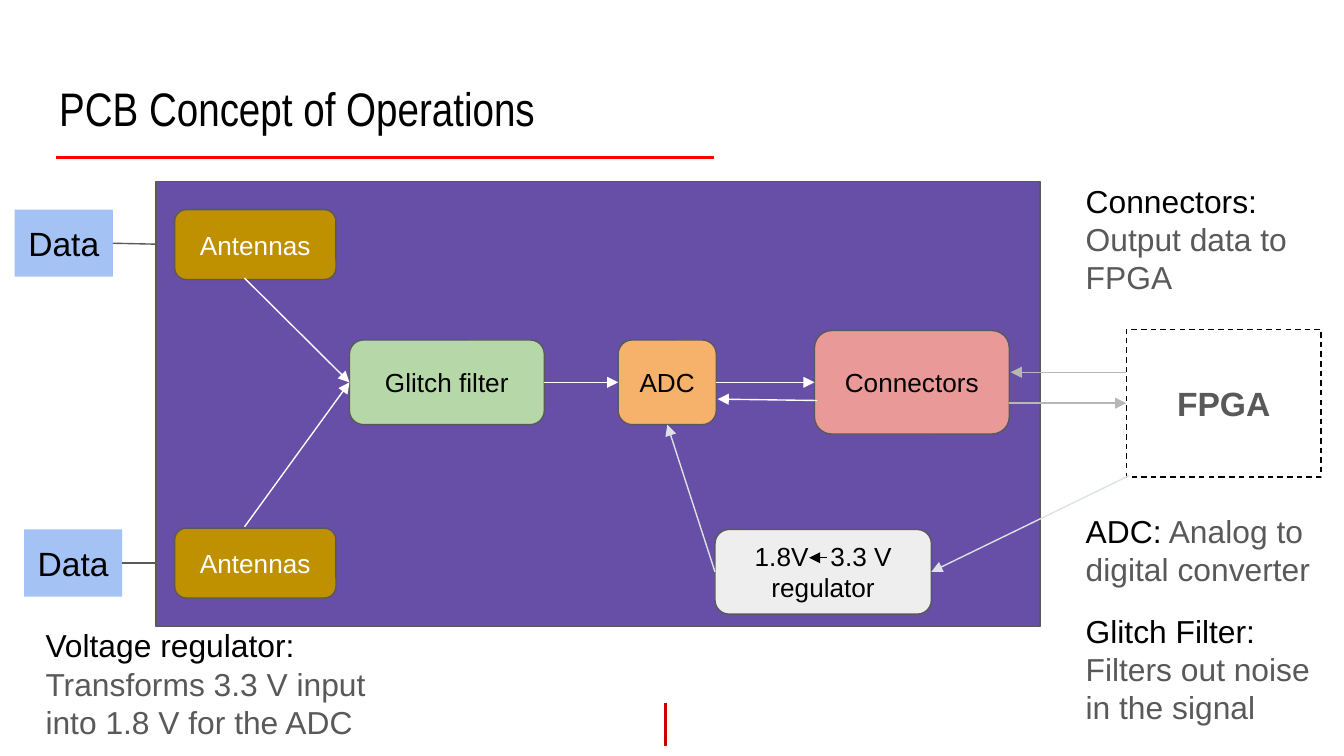
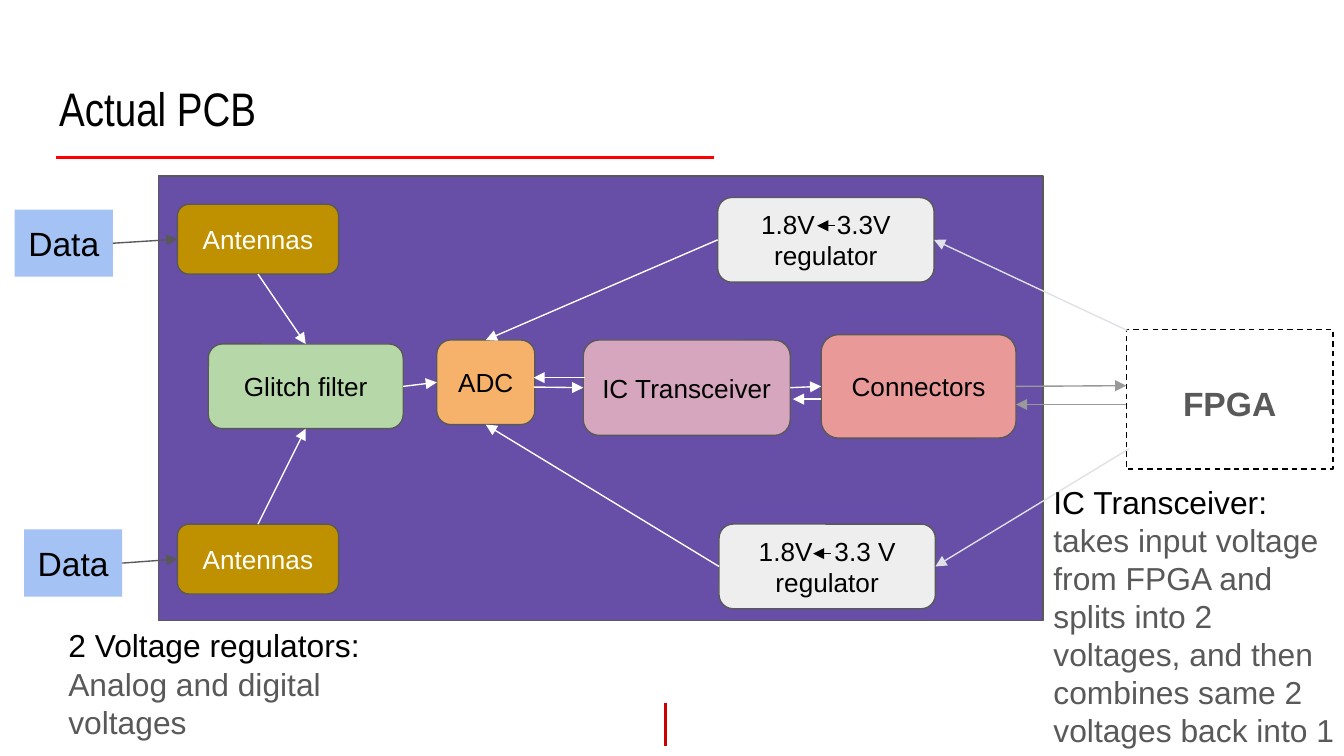
from lxml.etree import SubElement
from pptx import Presentation
from pptx.dml.color import RGBColor
from pptx.enum.dml import MSO_LINE
from pptx.enum.shapes import MSO_CONNECTOR as LINK, MSO_SHAPE as PRESET
from pptx.enum.text import MSO_ANCHOR as ANCHOR, PP_ALIGN as ALIGN
from pptx.oxml.ns import qn
from pptx.util import Inches, Pt

COLORS = {
    "black": "000000", "white": "FFFFFF", "slate": "595959", "rule": "FF0000",
    "tick": "CC0000", "board": "674EA7", "data": "A4C2F4", "antenna": "BF9000",
    "filter": "B6D7A8", "adc": "F6B26B", "transceiver": "D5A6BD",
    "connectors": "EA9999", "regulator": "EEEEEE", "power": "DEE2E6",
    "silver": "B7B7B7", "gray": "999999",
}
RGB = {name: RGBColor.from_string(value) for name, value in COLORS.items()}

deck = Presentation()
deck.slide_width = Inches(10)
deck.slide_height = deck.slide_width * 9 // 16

# Square grid: 100 columns by 56.25 rows
CELL = deck.slide_width // 100
MARGINS = {f"margin_{side}": CELL for side in ("left", "top", "right", "bottom")}
CENTERED = {**MARGINS, "word_wrap": True, "vertical_anchor": ANCHOR.MIDDLE}
ON_TOP = {**MARGINS, "word_wrap": True, "vertical_anchor": ANCHOR.TOP}
TOP, LEFT, BOTTOM, RIGHT = range(4)

# Kind: preset, width, height, fill, outline, text, text size, text colour
KINDS = {
    "Board": (PRESET.RECTANGLE, 65.8, 33.1, "board", "slate", "", 14, "white"),
    "FPGA": (PRESET.RECTANGLE, 14.5, 11, None, "black", "FPGA", 18, "slate"),
    "Data": (PRESET.RECTANGLE, 7.3, 5, "data", None, "Data", 18, "black"),
    "Antennas": (PRESET.ROUNDED_RECTANGLE, 12, 5.2, "antenna", "slate", "Antennas", 14, "white"),
    "Filter": (PRESET.ROUNDED_RECTANGLE, 14.5, 6.3, "filter", "slate", "Glitch filter", 14, "black"),
    "ADC": (PRESET.ROUNDED_RECTANGLE, 7.3, 6.3, "adc", "slate", "ADC", 14, "black"),
    "Transceiver": (PRESET.ROUNDED_RECTANGLE, 15.4, 7.1, "transceiver", "slate",
                    "IC Transceiver", 14, "black"),
    "Connectors": (PRESET.ROUNDED_RECTANGLE, 14.5, 7.7, "connectors", "slate",
                   "Connectors", 14, "black"),
    "Regulator": (PRESET.ROUNDED_RECTANGLE, 16.1, 6.3, "regulator", "slate",
                  "1.8V|3.3 V regulator", 14, "black"),
    "Regulator tight": (PRESET.ROUNDED_RECTANGLE, 16.1, 6.3, "regulator", "slate",
                        "1.8V|3.3V regulator", 14, "black"),
}

# Blocks: name -> kind, column, row and, where it differs, width and height.
# Wires: start, end, colour; an end is (block, side) or (column, row).
# Captions: column, row, width, height, term, explanation.
SLIDES = [
    {
        "title": "PCB Concept of Operations",
        "blocks": {
            "fpga": ("FPGA", 83.8, 24.5),
            "data 1": ("Data", 1.1, 15.6),
            "data 2": ("Data", 1.8, 39.4),
            "board": ("Board", 11.6, 13.5),
            "adc": ("ADC", 46, 25.3),
            "filter": ("Filter", 26, 25.3),
            "connectors": ("Connectors", 60.6, 24.6),
            "regulator": ("Regulator", 53.2, 39.4),
            "antennas 1": ("Antennas", 13, 15.6),
            "antennas 2": ("Antennas", 13, 39.3),
        },
        "behind board": [
            (("data 1", RIGHT), (13, 18.2), "slate"),
            (("data 2", RIGHT), (13, 41.9), "slate"),
        ],
        "wires": [
            ((18.2, 20.7), ("filter", LEFT), "white"),
            ((18.2, 39.2), ("filter", LEFT), "white"),
            (("filter", RIGHT), ("adc", LEFT), "white"),
            (("adc", RIGHT), ("connectors", LEFT), "white"),
            ((60.8, 29.8), (53.4, 29.7), "white"),
            ((84, 35.4), ("regulator", RIGHT), "power"),
            (("regulator", LEFT), ("adc", BOTTOM), "power"),
            ((83.8, 27.7), (75.2, 27.7), "silver"),
            ((75.1, 30), (83.8, 30), "silver"),
            ((61.5, 41.5), (60.2, 41.5), "black"),
        ],
        "captions": [
            (79.8, 37.1, 20.5, 7.7, "ADC:", "Analog to digital converter"),
            (79.8, 44.5, 18.7, 10.6, "Glitch Filter:", "Filters out noise in the signal"),
            (79.8, 12.5, 18.9, 10.6, "Connectors:", "Output data to FPGA"),
            (2.4, 45.6, 26.9, 10.6, "Voltage regulator:",
             "Transforms 3.3 V input into 1.8 V for the ADC"),
        ],
    },
    {
        "title": "Actual PCB",
        "blocks": {
            "board": ("Board", 11.8, 13.1),
            "adc": ("ADC", 32.5, 25.3),
            "filter": ("Filter", 15.5, 25.6),
            "connectors": ("Connectors", 61.1, 24.9),
            "regulator 1": ("Regulator tight", 53.4, 14.7),
            "regulator 2": ("Regulator", 53.5, 39),
            "antennas 1": ("Antennas", 13.2, 15.2),
            "antennas 2": ("Antennas", 13.2, 39),
            "fpga": ("FPGA", 83.8, 24.5, 15.4, 10.4),
            "data 1": ("Data", 1.1, 15.6),
            "data 2": ("Data", 1.8, 39.4),
            "transceiver": ("Transceiver", 43.4, 25.3),
        },
        "behind board": [],
        "wires": [
            (("data 1", RIGHT), ("antennas 1", LEFT), "slate"),
            (("data 2", RIGHT), ("antennas 2", LEFT), "slate"),
            (("antennas 1", BOTTOM), ("filter", TOP), "white"),
            (("antennas 2", TOP), ("filter", BOTTOM), "white"),
            (("filter", RIGHT), ("adc", LEFT), "white"),
            ((39.7, 28.8), ("transceiver", LEFT), "white"),
            ((43.5, 28.1), (39.7, 28.1), "white"),
            (("transceiver", RIGHT), ("connectors", LEFT), "white"),
            ((61.1, 29.7), (59, 29.7), "white"),
            (("regulator 1", LEFT), ("adc", TOP), "white"),
            (("regulator 2", LEFT), ("adc", BOTTOM), "white"),
            ((83.9, 24.6), ("regulator 1", RIGHT), "power"),
            ((84, 33.4), ("regulator 2", RIGHT), "power"),
            (("connectors", RIGHT), (83.8, 28.7), "gray"),
            ((83.8, 30.1), (75.6, 30.1), "gray"),
            ((62.1, 16.8), (60.8, 16.8), "black"),
            ((61.8, 41.2), (60.5, 41.2), "black"),
        ],
        "captions": [
            (4.1, 45.6, 25.2, 10.6, "2 Voltage regulators:", "Analog and digital voltages"),
            (77.4, 34.9, 23.6, 22.1, "IC Transceiver:",
             "takes input voltage from FPGA and splits into 2 voltages, "
             "and then combines same 2 voltages back into 1"),
        ],
    },
]


def write(frame, runs, size, align, layout, font="Arial", bold=False):
    for name, value in layout.items():
        setattr(frame, name, value)
    line = frame.paragraphs[0]
    line.alignment = align
    for text, color in runs:
        run = line.add_run()
        run.text = text
        look = {"name": font, "size": Pt(size), "bold": bold}
        for name, value in look.items():
            setattr(run.font, name, value)
        run.font.color.rgb = RGB[color]
        if text == " ":  # widened to leave room for the small arrow
            run.font._element.set("spc", "780")


def wire(slide, start, end, color, placed, width=0.75, arrow=True):
    free = [(0, 0) if point[0] in placed else point for point in (start, end)]
    link = slide.shapes.add_connector(
        LINK.STRAIGHT, *(int(value * CELL) for point in free for value in point))
    if start[0] in placed:
        link.begin_connect(placed[start[0]], start[1])
    if end[0] in placed:
        link.end_connect(placed[end[0]], end[1])
    link.line.color.rgb = RGB[color]
    link.line.width = Pt(width)
    if arrow:
        SubElement(link.line._get_or_add_ln(), qn("a:tailEnd"), type="triangle")
    SubElement(link._element.spPr, qn("a:effectLst"))


for content in SLIDES:
    slide = deck.slides.add_slide(deck.slide_layouts[5])

    # Shared rule, tick and title
    wire(slide, (49.5, 52.3), (49.5, 55.5), "tick", {}, 1.5, arrow=False)
    wire(slide, (4.2, 11.7), (53.1, 11.7), "rule", {}, 1.5, arrow=False)
    heading = slide.shapes.title
    for side, cells in zip(("left", "top", "width", "height"), (3.4, 4.9, 93.2, 6.3)):
        setattr(heading, side, int(cells * CELL))
    write(heading.text_frame, [(content["title"], "black")], 25.2, ALIGN.LEFT,
          CENTERED, font="Arial Narrow")

    # Blocks
    placed = {}
    for name, (kind, column, row, *custom) in content["blocks"].items():
        preset, width, height, fill, outline, label, size, ink = KINDS[kind]
        if kind == "Board":
            for start, end, color in content["behind board"]:
                wire(slide, start, end, color, placed)
        width, height = custom or (width, height)
        block = slide.shapes.add_shape(
            preset, *(int(cells * CELL) for cells in (column, row, width, height)))
        block.shadow.inherit = False
        if fill:
            block.fill.solid()
            block.fill.fore_color.rgb = RGB[fill]
        else:
            block.fill.background()
        if outline:
            block.line.color.rgb = RGB[outline]
            block.line.width = Pt(0.75)
        else:
            block.line.fill.background()
        layout = CENTERED
        if kind == "Data":
            layout = {**CENTERED, "word_wrap": False}
        if kind == "FPGA":
            block.line.dash_style = MSO_LINE.DASH
            layout = {**ON_TOP, "margin_top": 4 * CELL}
        if label:
            before, gap, after = label.partition("|")
            runs = [(before, ink)] + ([(" ", ink), (after, ink)] if gap else [])
            write(block.text_frame, runs, size, ALIGN.CENTER, layout, bold=kind == "FPGA")
        placed[name] = block

    # Signal and power wires
    for start, end, color in content["wires"]:
        wire(slide, start, end, color, placed)

    # Captions
    for *area, term, explanation in content["captions"]:
        caption = slide.shapes.add_textbox(*(int(cells * CELL) for cells in area))
        write(caption.text_frame, [(term, "black"), (" " + explanation, "slate")],
              17, ALIGN.LEFT, ON_TOP)

deck.save("out.pptx")
